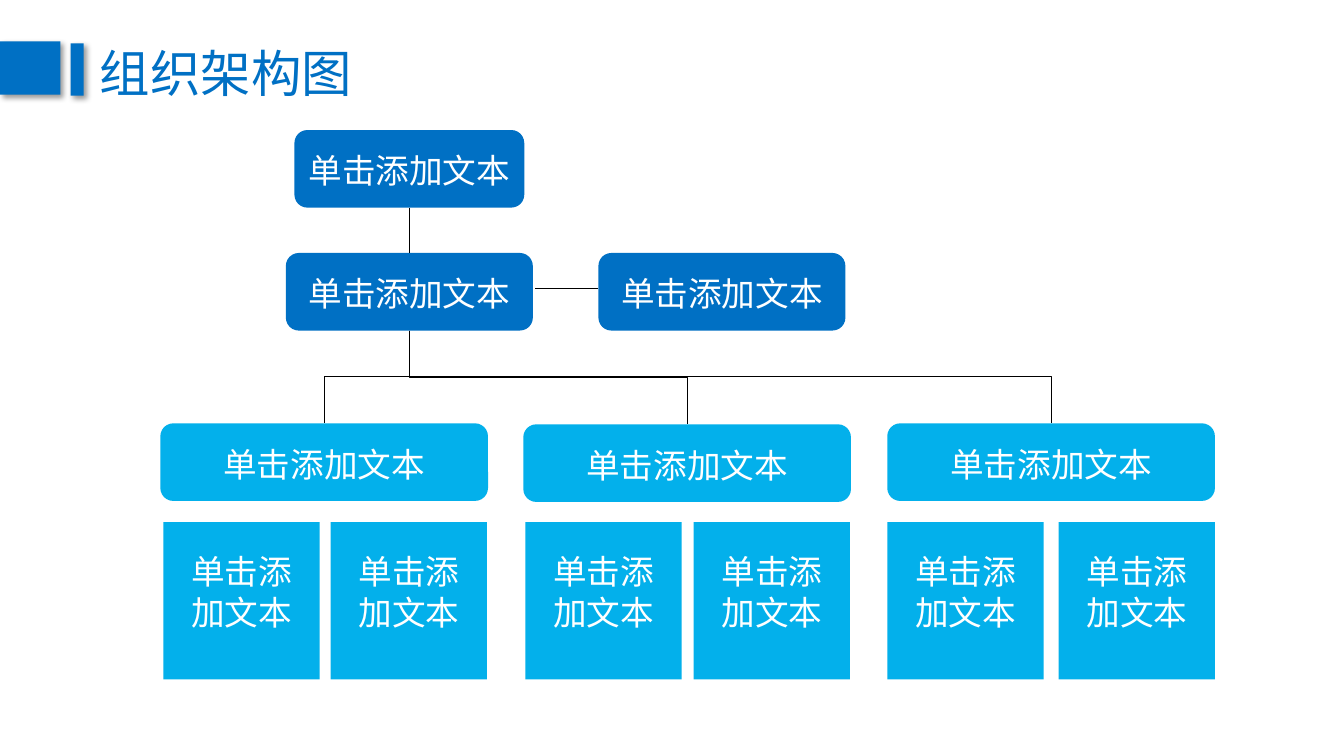
from lxml.etree import SubElement
from pptx import Presentation
from pptx.dml.color import RGBColor
from pptx.enum.shapes import MSO_CONNECTOR, MSO_SHAPE
from pptx.enum.text import MSO_ANCHOR, MSO_AUTO_SIZE, PP_ALIGN
from pptx.oxml.ns import qn
from pptx.util import Inches, Pt

# Content: centre x, top, width of each box, in inches
TITLE = "组织架构图"
LABEL = "单击添加文本"
LEADERS = {
    "head": (LABEL, 4.06, 1.29, 2.28),
    "deputy": (LABEL, 4.06, 2.51, 2.45),
    "assistant": (LABEL, 7.16, 2.51, 2.45),
}
DEPARTMENTS = [  # label, left, top, then (label, left) of each team
    (LABEL, 1.59, 4.20, [(LABEL, 1.62), (LABEL, 3.28)]),
    (LABEL, 5.19, 4.21, [(LABEL, 5.21), (LABEL, 6.88)]),
    (LABEL, 8.80, 4.20, [(LABEL, 8.80), (LABEL, 10.50)]),
]
TITLE_BARS = [(0, 0.41, 0.60, 0.53), (0.70, 0.43, 0.13, 0.52)]
ASSISTANT_LINK = (5.31, 5.93, 2.86)
BOX_HEIGHT, DEPARTMENT_WIDTH = 0.77, 3.25
TEAM_TOP, TEAM_WIDTH, TEAM_HEIGHT = 5.18, 1.55, 1.56


class Theme:
    font = "Noto Sans CJK SC"
    dark = RGBColor.from_string("0070C4")
    light = RGBColor.from_string("03B0EB")
    white = RGBColor.from_string("FFFFFF")
    black = RGBColor.from_string("000000")
    title_size, label_size, line_width = Pt(36), Pt(24), Pt(0.75)


def apply(target, values):
    for name, value in values.items():
        setattr(target, name, value)


def add_shadow(effects):
    shadow = SubElement(effects, qn("a:outerShdw"), blurRad=str(Pt(4)), dist=str(Pt(3)),
                        dir="2700000", algn="tl", rotWithShape="0")
    color = SubElement(shadow, qn("a:srgbClr"), val=str(Theme.black))
    SubElement(color, qn("a:alpha"), val="40000")


def write(shape, text, size, color, alignment, frame_format):
    frame = shape.text_frame
    apply(frame, frame_format)
    paragraph = frame.paragraphs[0]
    paragraph.alignment = alignment
    run = paragraph.add_run()
    run.text = text
    apply(run.font, {"size": size, "name": Theme.font})
    run.font.color.rgb = color
    SubElement(run.font._element, qn("a:ea"), typeface=Theme.font)
    return run


def add_block(slide, kind, left, top, width, height, color):
    shape = slide.shapes.add_shape(kind, *map(Inches, (left, top, width, height)))
    shape.shadow.inherit = False
    shape.fill.solid()
    shape.fill.fore_color.rgb = color
    shape.line.fill.background()
    return shape


def add_box(slide, text, left, top, width, color):
    box = add_block(slide, MSO_SHAPE.ROUNDED_RECTANGLE, left, top, width, BOX_HEIGHT, color)
    write(box, text, Theme.label_size, Theme.white, PP_ALIGN.CENTER, {
        "word_wrap": True, "vertical_anchor": MSO_ANCHOR.MIDDLE,
        "margin_left": 0, "margin_right": 0, "margin_top": Inches(0.03), "margin_bottom": 0})
    return box


def add_team(slide, text, left):
    team = add_block(slide, MSO_SHAPE.RECTANGLE, left, TEAM_TOP, TEAM_WIDTH, TEAM_HEIGHT, Theme.light)
    write(team, text, Theme.label_size, Theme.white, PP_ALIGN.CENTER, {
        "word_wrap": True, "vertical_anchor": MSO_ANCHOR.TOP,
        "margin_left": Inches(0.17), "margin_right": Inches(0.17), "margin_top": Inches(0.29)})


def add_link(slide, kind, x1, y1, x2, y2):
    link = slide.shapes.add_connector(kind, *map(Inches, (x1, y1, x2, y2)))
    link.line.color.rgb = Theme.black
    link.line.width = Theme.line_width
    SubElement(link._element.spPr, qn("a:effectLst"))
    return link


def add_branch(slide, x1, y1, x2, y2):
    """Elbow that leaves downwards: a level elbow turned by a quarter."""
    center_x, center_y = (x1 + x2) / 2, (y1 + y2) / 2
    half_width, half_height = (y2 - y1) / 2, abs(x2 - x1) / 2
    side = -1 if x2 > x1 else 1
    branch = add_link(slide, MSO_CONNECTOR.ELBOW,
                      center_x - side * half_width, center_y - half_height,
                      center_x + side * half_width, center_y + half_height)
    branch._element.spPr.find(qn("a:xfrm")).set("rot", "5400000" if side == 1 else "16200000")


def main():
    presentation = Presentation()
    apply(presentation, {"slide_width": Inches(13.33), "slide_height": Inches(7.5)})
    slide = presentation.slides.add_slide(presentation.slide_layouts[5])

    # Title with its two bars
    title = slide.shapes.title
    apply(title, {"left": Inches(0.89), "top": Inches(0.36),
                  "width": Inches(2.73), "height": Inches(0.71)})
    run = write(title, TITLE, Theme.title_size, Theme.dark, PP_ALIGN.LEFT, {
        "word_wrap": False, "auto_size": MSO_AUTO_SIZE.NONE, "vertical_anchor": MSO_ANCHOR.MIDDLE})
    properties = run.font._element
    effects = SubElement(properties, qn("a:effectLst"))
    properties.find(qn("a:solidFill")).addnext(effects)
    add_shadow(effects)
    for bar_place in TITLE_BARS:
        bar = add_block(slide, MSO_SHAPE.RECTANGLE, *bar_place, Theme.dark)
        add_shadow(bar._element.spPr.find(qn("a:effectLst")))

    # Leaders
    boxes = {name: add_box(slide, text, center - width / 2, top, width, Theme.dark)
             for name, (text, center, top, width) in LEADERS.items()}
    start, end, level = ASSISTANT_LINK
    add_link(slide, MSO_CONNECTOR.STRAIGHT, start, level, end, level)
    _, trunk, deputy_top, _ = LEADERS["deputy"]
    command = add_link(slide, MSO_CONNECTOR.STRAIGHT, trunk, deputy_top, trunk, deputy_top)
    command.begin_connect(boxes["head"], 2)
    command.end_connect(boxes["deputy"], 0)

    # Departments and their teams
    for text, left, top, teams in DEPARTMENTS:
        add_branch(slide, trunk, deputy_top + BOX_HEIGHT, left + DEPARTMENT_WIDTH / 2, top)
        add_box(slide, text, left, top, DEPARTMENT_WIDTH, Theme.light)
        for team_text, team_left in teams:
            add_team(slide, team_text, team_left)

    presentation.save("out.pptx")


if __name__ == "__main__":
    main()
